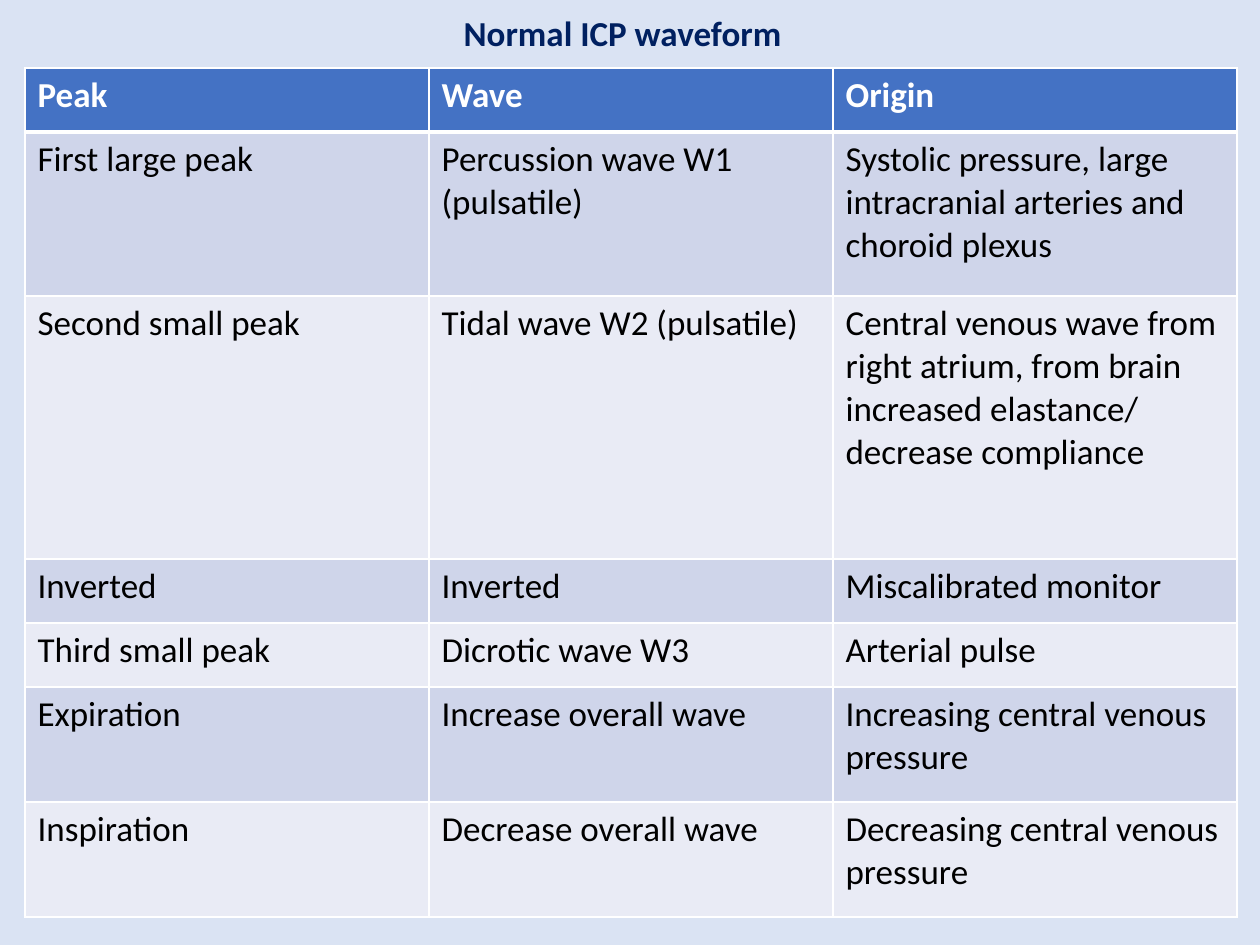
"""Build the slide on the normal ICP waveform: a title and a table of peaks."""
from dataclasses import dataclass

from lxml import etree
from pptx import Presentation
from pptx import util as u
from pptx.dml.color import RGBColor
from pptx.enum import text
from pptx.oxml import ns

PX_PER_INCH = 126
FONT = "Calibri"
BACKGROUND = RGBColor(0xDA, 0xE3, 0xF3)
NAVY = RGBColor(0x00, 0x20, 0x60)
BLUE = RGBColor(0x44, 0x72, 0xC4)
WHITE = RGBColor(0xFF, 0xFF, 0xFF)
BLACK = RGBColor(0x00, 0x00, 0x00)
BANDS = (RGBColor(0xCF, 0xD5, 0xEA), RGBColor(0xE9, 0xEB, 0xF5))


@dataclass(frozen=True)
class WaveRow:
    height: int
    peak: str
    wave: str
    origin: str


ROWS = (
    WaveRow(64, "Peak", "Wave", "Origin"),
    WaveRow(164, "First large peak", "Percussion wave W1 (pulsatile)",
            "Systolic pressure, large intracranial arteries and choroid plexus"),
    WaveRow(263, "Second small peak", "Tidal wave W2 (pulsatile)",
            "Central venous wave from right atrium, from brain increased "
            "elastance/ decrease compliance"),
    WaveRow(64, "Inverted", "Inverted", "Miscalibrated monitor"),
    WaveRow(64, "Third small peak", "Dicrotic wave W3", "Arterial pulse"),
    WaveRow(115, "Expiration", "Increase overall wave",
            "Increasing central venous pressure"),
    WaveRow(115, "Inspiration", "Decrease overall wave",
            "Decreasing central venous pressure"),
)


def px(n: int) -> int:
    return u.Inches(n / PX_PER_INCH)


def format_text(tf, color: RGBColor, bold: bool) -> None:
    for p in tf.paragraphs:
        p.alignment = text.PP_ALIGN.LEFT
        for r in p.runs:
            r.font.name = FONT
            r.font.size = u.Pt(20)
            r.font.bold = bold
            r.font.color.rgb = color


def add_borders(cell, top: int, bottom: int) -> None:
    tc_pr = cell._tc.get_or_add_tcPr()
    for side, width in (("L", 1), ("R", 1), ("T", top), ("B", bottom)):
        ln = etree.SubElement(tc_pr, ns.qn(f"a:ln{side}"), w=str(u.Pt(width)))
        fill = etree.SubElement(ln, ns.qn("a:solidFill"))
        etree.SubElement(fill, ns.qn("a:srgbClr"), val=str(WHITE))


def add_title(slide, title: str) -> None:
    sp = slide.shapes.title
    sp.left, sp.top, sp.width, sp.height = px(451), px(5), px(357), px(97)
    tf = sp.text_frame
    tf.text = title
    tf.word_wrap = True
    tf.auto_size = text.MSO_AUTO_SIZE.NONE
    tf.vertical_anchor = text.MSO_ANCHOR.TOP
    format_text(tf, NAVY, True)


def add_wave_table(slide, rows: tuple[WaveRow, ...]) -> None:
    col_width = 404
    height = sum(row.height for row in rows)
    table = slide.shapes.add_table(
        len(rows), 3, px(25), px(68), px(3 * col_width), px(height)).table
    for col in table.columns:
        col.width = px(col_width)
    for i, row in enumerate(rows):
        header = i == 0
        table.rows[i].height = px(row.height)
        for j, label in enumerate((row.peak, row.wave, row.origin)):
            cell = table.cell(i, j)
            cell.text_frame.text = label
            format_text(cell.text_frame, WHITE if header else BLACK, header)
            add_borders(cell, 3 if i == 1 else 1, 3 if header else 1)
            cell.fill.solid()
            cell.fill.fore_color.rgb = BLUE if header else BANDS[(i - 1) % 2]


def main() -> None:
    prs = Presentation()
    prs.slide_width, prs.slide_height = u.Inches(10), u.Inches(7.5)
    slide = prs.slides.add_slide(prs.slide_layouts[5])
    slide.background.fill.solid()
    slide.background.fill.fore_color.rgb = BACKGROUND
    add_title(slide, "Normal ICP waveform")
    add_wave_table(slide, ROWS)
    prs.save("out.pptx")


if __name__ == "__main__":
    main()
